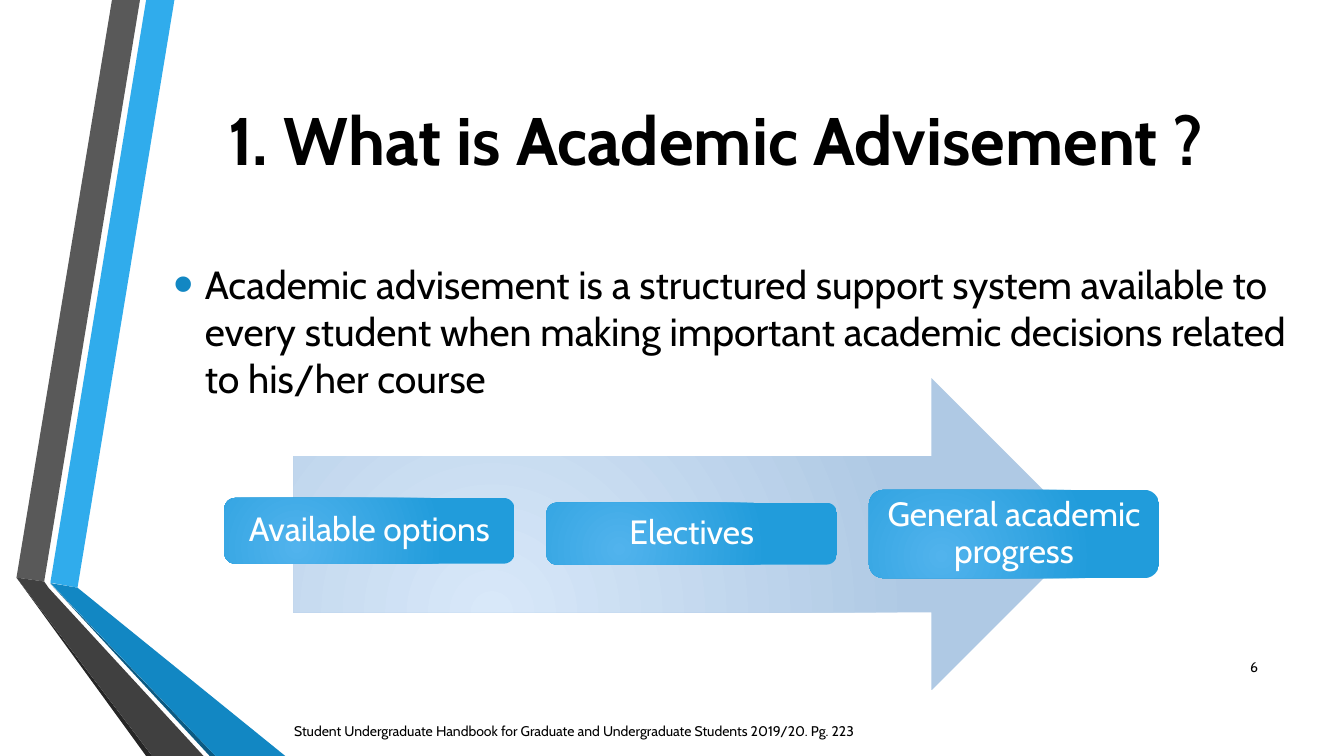
import pptx
import pptx.dml.color
import pptx.enum.shapes
import pptx.enum.text
import pptx.oxml
import pptx.oxml.ns
import pptx.util
from dataclasses import dataclass

Pt = pptx.util.Pt
qn = pptx.oxml.ns.qn
ALIGN = pptx.enum.text.PP_ALIGN
ANCHOR = pptx.enum.text.MSO_ANCHOR
SHAPE = pptx.enum.shapes.MSO_SHAPE


@dataclass(frozen=True)
class Theme:
    font: str = "Cabin"
    text: str = "000000"
    light: str = "FFFFFF"
    bullet: str = "1287C3"
    arrow: tuple = ("D8E8F9", "AFC9E4")
    box: tuple = ("51B3ED", "219CDB")
    title_size: int = 48
    body_size: int = 28
    box_size: int = 24
    small_size: int = 10


THEME = Theme()

TITLE = "1. What is Academic Advisement ?"
DEFINITION = ("Academic advisement is a structured support system available to every student "
              "when making important academic decisions related to his/her course")
SOURCE = "Student Undergraduate Handbook for Graduate and Undergraduate Students 2019/20. Pg. 223"
PAGE = "6"

# Topic, top and height of each box on the arrow
TOPICS = [
    ("Available options", 355.7, 47),
    ("Electives", 359.1, 44.2),
    ("General academic progress", 349.9, 63.1),
]
BOX_LEFT, BOX_WIDTH, BOX_STEP = 160.2, 207.4, 230.2
ARROW = (209.5, 270, 567.4, 223.2)

# Colour and corner points of each ribbon, back to front
RIBBONS = [
    ("30ACEC", [(36, 416.2), (55.4, 419.8), (124.6, 0), (104.4, 0)]),
    ("595959", [(100, 0), (80, 0), (11.8, 412.6), (31.6, 415.4)]),
    ("262626", [(11.8, 412.6), (104.4, 540), (108.7, 540)]),
    ("0C5A82", [(36, 416.9), (149.8, 540), (154, 540)]),
    ("1287C3", [(36, 416.5), (154, 540), (203.8, 540), (55.4, 419.8)]),
    ("404040", [(145.4, 540), (34.6, 419.8), (31.6, 415.4), (11.8, 412.6), (108.7, 540)]),
]


def rgb(value):
    return pptx.dml.color.RGBColor.from_string(value)


def place(sp, left, top, width, height):
    sp.left, sp.top, sp.width, sp.height = (Pt(v) for v in (left, top, width, height))


def write(sp, text, size, color=THEME.text, bold=False, align=ALIGN.LEFT,
          anchor=ANCHOR.MIDDLE, spacing=None):
    """Put one formatted paragraph in a shape and return the paragraph."""
    tf = sp.text_frame
    tf.word_wrap = True
    tf.auto_size = pptx.enum.text.MSO_AUTO_SIZE.NONE
    tf.vertical_anchor = anchor
    p = tf.paragraphs[0]
    p.alignment = align
    p.space_before = Pt(0)
    if spacing:
        p.line_spacing = spacing
    r = p.add_run()
    r.text = text
    r.font.name = THEME.font
    r.font.size = Pt(size)
    r.font.bold = bold
    r.font.color.rgb = rgb(color)
    return p


def add_bullet(p, color, percent, indent):
    pPr = p._p.get_or_add_pPr()
    pPr.set("marL", str(Pt(indent)))
    pPr.set("indent", str(-Pt(indent)))
    ns = pptx.oxml.ns.nsdecls("a")
    for xml in (f'<a:buClr {ns}><a:srgbClr val="{color}"/></a:buClr>',
                f'<a:buSzPct {ns} val="{percent * 1000}"/>',
                f'<a:buFont {ns} typeface="Arial"/>',
                f'<a:buChar {ns} char="•"/>'):
        pPr.append(pptx.oxml.parse_xml(xml))


def add_glow_shape(slide, kind, box, colors):
    """Add a preset shape with a circular gradient centred on its lower edge."""
    sp = slide.shapes.add_shape(kind, *(Pt(v) for v in box))
    sp.shadow.inherit = False
    sp.line.fill.background()
    sp.fill.gradient()
    for stop, color in zip(sp.fill.gradient_stops, colors):
        stop.color.rgb = rgb(color)
    grad = sp._element.spPr.find(qn("a:gradFill"))
    grad.replace(grad.find(qn("a:lin")), pptx.oxml.parse_xml(
        f'<a:path {pptx.oxml.ns.nsdecls("a")} path="circle">'
        '<a:fillToRect l="50000" t="100000" r="100000" b="50000"/></a:path>'))
    return sp


def add_ribbon(slide, color, points):
    start, *rest = [(Pt(x), Pt(y)) for x, y in points]
    builder = slide.shapes.build_freeform(*start)
    builder.add_line_segments(rest, close=True)
    sp = builder.convert_to_shape()
    sp.shadow.inherit = False
    sp.fill.solid()
    sp.fill.fore_color.rgb = rgb(color)
    sp.line.fill.background()


def add_label(slide, box, text, align):
    sp = slide.shapes.add_textbox(*(Pt(v) for v in box))
    write(sp, text, THEME.small_size, align=align)


def main():
    prs = pptx.Presentation()
    prs.slide_width, prs.slide_height = Pt(960), Pt(540)
    slide = prs.slides.add_slide(prs.slide_layouts[1])

    for color, points in RIBBONS:
        add_ribbon(slide, color, points)

    title = slide.shapes.title
    place(title, 116.6, 54, 789.1, 90)
    write(title, TITLE, THEME.title_size, bold=True, align=ALIGN.CENTER)

    body = slide.placeholders[1]
    place(body, 116.6, 138.2, 823.7, 279.4)
    p = write(body, DEFINITION, THEME.body_size, anchor=ANCHOR.TOP)
    body.text_frame.margin_top = Pt(48)
    add_bullet(p, THEME.bullet, 145, 22.5)

    add_glow_shape(slide, SHAPE.RIGHT_ARROW, ARROW, THEME.arrow)
    for i, (topic, top, height) in enumerate(TOPICS):
        box = (BOX_LEFT + i * BOX_STEP, top, BOX_WIDTH, height)
        sp = add_glow_shape(slide, SHAPE.ROUNDED_RECTANGLE, box, THEME.box)
        write(sp, topic, THEME.box_size, THEME.light, align=ALIGN.CENTER, spacing=0.9)

    add_label(slide, (203, 507.6, 558, 28.8), SOURCE, ALIGN.LEFT)
    add_label(slide, (862.6, 462.2, 43.2, 28.8), PAGE, ALIGN.RIGHT)
    prs.save("out.pptx")


if __name__ == "__main__":
    main()
